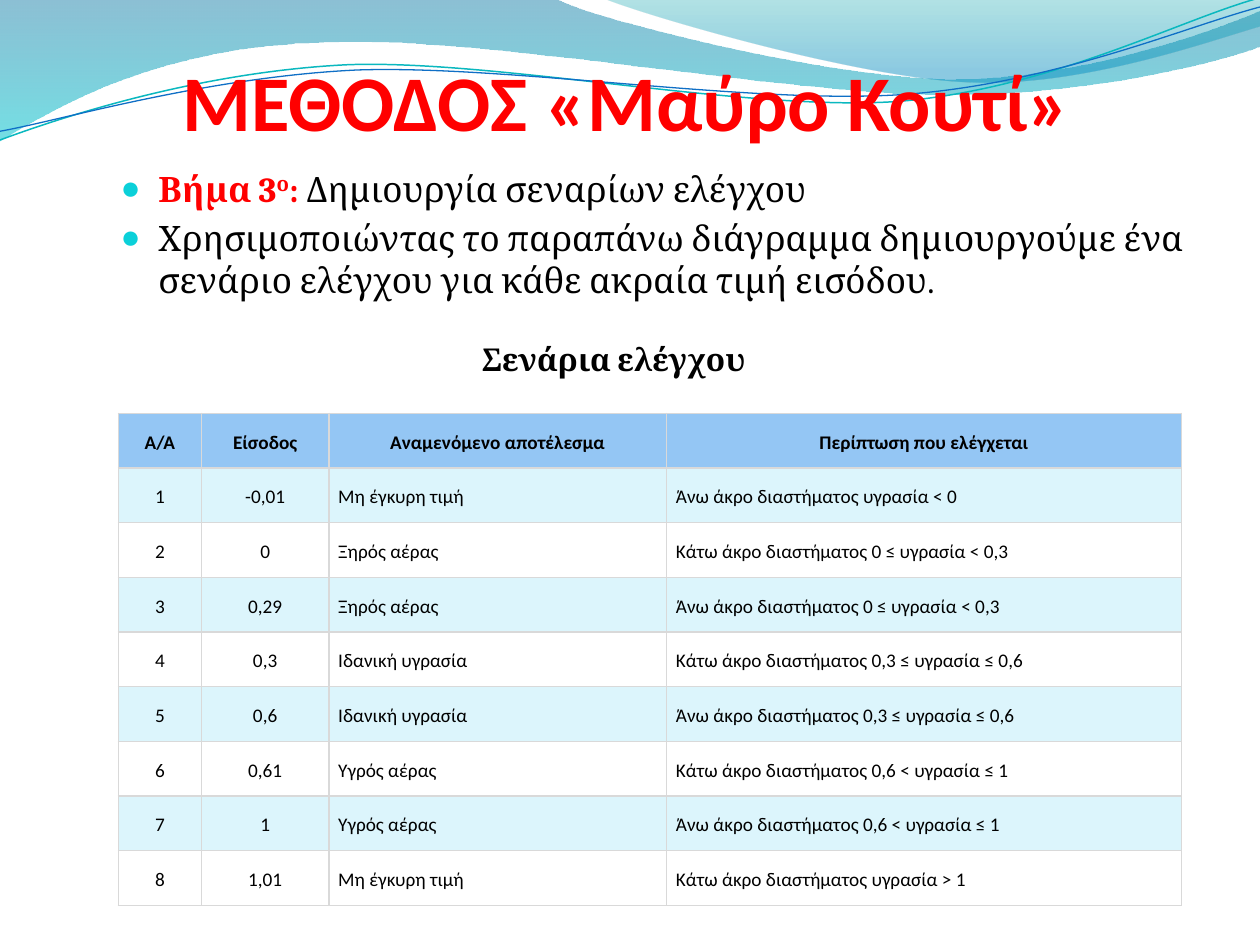
from lxml import etree
from pptx import Presentation
from pptx.dml.color import RGBColor
from pptx.enum import text
from pptx.oxml import ns
from pptx.util import Pt

RED = RGBColor(0xFF, 0x00, 0x00)
BLACK = RGBColor(0x00, 0x00, 0x00)
WHITE = RGBColor(0xFF, 0xFF, 0xFF)
GREY = RGBColor(0xD9, 0xD9, 0xD9)
HEADER_BLUE = RGBColor(0x94, 0xC6, 0xF4)
PALE_BLUE = RGBColor(0xDC, 0xF5, 0xFC)
CYAN = RGBColor(0x0B, 0xD0, 0xD9)
TEAL = RGBColor(0x0A, 0xB8, 0xBF)
BLUE = RGBColor(0x0F, 0x6F, 0xC6)
LEFT_WAVE = [(RGBColor(0x00, 0x74, 0xA1), 0, 45), (RGBColor(0x00, 0xC6, 0xCF), 1, 55)]
RIGHT_WAVE = [(RGBColor(0x00, 0xA1, 0xA9), 0, 30), (RGBColor(0x00, 0x8B, 0xBF), 0.8, 45)]

SCENARIOS = [
    ("Α/Α", "Είσοδος", "Αναμενόμενο αποτέλεσμα", "Περίπτωση που ελέγχεται"),
    ("1", "-0,01", "Μη έγκυρη τιμή", "Άνω άκρο διαστήματος υγρασία < 0"),
    ("2", "0", "Ξηρός αέρας", "Κάτω άκρο διαστήματος 0 ≤ υγρασία < 0,3"),
    ("3", "0,29", "Ξηρός αέρας", "Άνω άκρο διαστήματος 0 ≤ υγρασία < 0,3"),
    ("4", "0,3", "Ιδανική υγρασία", "Κάτω άκρο διαστήματος 0,3 ≤ υγρασία ≤ 0,6"),
    ("5", "0,6", "Ιδανική υγρασία", "Άνω άκρο διαστήματος 0,3 ≤ υγρασία ≤ 0,6"),
    ("6", "0,61", "Υγρός αέρας", "Κάτω άκρο διαστήματος 0,6 < υγρασία ≤ 1"),
    ("7", "1", "Υγρός αέρας", "Άνω άκρο διαστήματος 0,6 < υγρασία ≤ 1"),
    ("8", "1,01", "Μη έγκυρη τιμή", "Κάτω άκρο διαστήματος υγρασία > 1"),
]


def add_xml(parent, tag, **attributes):
    """Append a drawing element to parent and return it."""
    return etree.SubElement(parent, ns.qn(tag), attributes)


def write(paragraph, words, size=20, font="Cambria", color=BLACK, bold=False, raised=False):
    """Add a formatted run to a paragraph."""
    run = paragraph.add_run()
    run.text = words
    run.font.size, run.font.name, run.font.bold = Pt(size), font, bold
    run.font.color.rgb = color
    if raised:
        run.font._element.set("baseline", "30000")


def bend(outline, segments):
    """Join the three straight steps of each six-number segment into one cubic curve."""
    track = next(outline.element.spPr.iter(ns.qn("a:path")))
    steps = iter(track.findall(ns.qn("a:lnTo")))
    for segment in segments:
        group = [next(steps) for _ in range(len(segment) // 2)]
        if len(group) == 3:
            arc = add_xml(track, "a:cubicBezTo")
            group[0].addprevious(arc)
            for step in group:
                arc.append(step[0])
                track.remove(step)


class Deck:
    """Hold the slide and its style, with a method for each kind of element."""

    body_font, table_font = "Cambria", "Calibri"

    def __init__(self):
        """Start a presentation with a title and two body placeholders."""
        self.presentation = Presentation()
        self.presentation.slide_width, self.presentation.slide_height = Pt(720), Pt(540)
        self.slide = self.presentation.slides.add_slide(self.presentation.slide_layouts[3])

    def curve(self, start, segments, closed=False):
        """Draw lines (2 numbers) and cubic curves (6 numbers) without shadow."""
        points = [(Pt(x), Pt(y)) for segment in segments
                  for x, y in zip(segment[::2], segment[1::2])]
        builder = self.slide.shapes.build_freeform(*map(Pt, start), scale=1.0)
        builder.add_line_segments(points, close=closed)
        outline = builder.convert_to_shape()
        outline.shadow.inherit = False
        bend(outline, segments)
        return outline

    def wave(self, start, segments, stops):
        """Draw a translucent wave with a vertical gradient."""
        wave = self.curve(start, segments, closed=True)
        wave.line.fill.background()
        wave.fill.gradient()
        wave.fill.gradient_angle = 270
        for stop, (color, position, _) in zip(wave.fill.gradient_stops, stops):
            stop.color.rgb, stop.position = color, position
        tints = list(wave.element.spPr.iter(ns.qn("a:srgbClr")))
        for tint, (_, _, opacity) in zip(tints, stops):
            add_xml(tint, "a:alpha", val=str(opacity * 1000))

    def strand(self, start, segments, color, width):
        """Draw a thin open curve."""
        strand = self.curve(start, segments)
        strand.fill.background()
        strand.line.color.rgb, strand.line.width = color, Pt(width)

    def placeholder(self, index, box, margins, anchor):
        """Move a placeholder to the front and return its text frame."""
        holder = self.slide.placeholders[index]
        holder.left, holder.top, holder.width, holder.height = map(Pt, box)
        holder.element.getparent().append(holder.element)
        frame = holder.text_frame
        frame.word_wrap, frame.auto_size = True, text.MSO_AUTO_SIZE.NONE
        frame.vertical_anchor = anchor
        (frame.margin_left, frame.margin_top,
         frame.margin_right, frame.margin_bottom) = map(Pt, margins)
        return frame

    def title(self, words):
        """Fill the title."""
        frame = self.placeholder(0, (34, 28, 648, 56), (0, 3.6, 0, 0), text.MSO_ANCHOR.BOTTOM)
        heading = frame.paragraphs[0]
        heading.alignment = text.PP_ALIGN.CENTER
        write(heading, words, size=45, font=self.table_font, color=RED, bold=True)

    def bullets(self, items):
        """Fill the body with bulleted items, each a list of runs."""
        frame = self.placeholder(1, (61.7, 95.5, 636, 96), (7.2, 0, 7.2, 3.6), text.MSO_ANCHOR.TOP)
        for number, runs in enumerate(items):
            item = frame.add_paragraph() if number else frame.paragraphs[0]
            item.space_before = Pt(4)
            layout = item._p.get_or_add_pPr()
            layout.set("marL", str(Pt(21.6)))
            layout.set("indent", str(Pt(-21.6)))
            add_xml(add_xml(layout, "a:buClr"), "a:srgbClr", val=str(CYAN))
            add_xml(layout, "a:buSzPct", val="95000")
            add_xml(layout, "a:buChar", char="●")
            for words, style in runs:
                write(item, words, font=self.body_font, **style)

    def caption(self, words):
        """Fill the second body placeholder with the table's heading."""
        frame = self.placeholder(2, (219.3, 180, 318, 50), (3.6, 0, 3.6, 0), text.MSO_ANCHOR.MIDDLE)
        caption = frame.paragraphs[0]
        caption.level = 2
        caption.space_before = Pt(3.6)
        layout = caption._p.get_or_add_pPr()
        layout.set("marL", str(Pt(72)))
        layout.set("indent", str(Pt(-19.4)))
        add_xml(layout, "a:buNone")
        write(caption, words, size=18, font=self.body_font, bold=True)

    def table(self, rows, widths, left, top, row_height):
        """Add a banded table with a header row."""
        table = self.slide.shapes.add_table(
            len(rows), len(widths), Pt(left), Pt(top),
            Pt(sum(widths)), Pt(row_height * len(rows))).table
        table.first_row = table.horz_banding = False
        for column, width in zip(table.columns, widths):
            column.width = Pt(width)
        for r, row in enumerate(rows):
            table.rows[r].height = Pt(row_height)
            fill = HEADER_BLUE if r == 0 else PALE_BLUE if r % 2 else WHITE
            for c, words in enumerate(row):
                self.cell(table.cell(r, c), words, fill, header=r == 0, centred=r == 0 or c < 2)

    def cell(self, cell, words, fill, header, centred):
        """Format and fill one table cell."""
        cell.margin_left = cell.margin_right = Pt(5.4)
        cell.margin_top = cell.margin_bottom = 0
        cell.vertical_anchor = text.MSO_ANCHOR.MIDDLE
        for side in ("a:lnL", "a:lnR", "a:lnT", "a:lnB"):
            border = add_xml(cell._tc.get_or_add_tcPr(), side, w=str(Pt(1)))
            add_xml(add_xml(border, "a:solidFill"), "a:srgbClr", val=str(GREY))
        cell.fill.solid()
        cell.fill.fore_color.rgb = fill
        entry = cell.text_frame.paragraphs[0]
        entry.alignment = text.PP_ALIGN.CENTER if centred else text.PP_ALIGN.LEFT
        entry.line_spacing, entry.space_before = 1.15, Pt(6)
        write(entry, words, size=11, font=self.table_font, bold=header)


def main():
    """Build the slide and save it."""
    deck = Deck()
    deck.wave((0, 0), [(317, -1), (343, 12, 478, 45, 546, 45), (614, 45, 690, 19, 720, 6),
                       (721, 26), (708, 32, 626, 55, 537, 54), (448, 54, 275, 20, 185, 24),
                       (93, 26, 33, 60, -1, 81)], LEFT_WAVE)
    deck.wave((345, -1), [(366, 8, 491, 45, 554, 47), (618, 50, 692, 23, 720, 15), (720, 0)],
              RIGHT_WAVE)
    deck.strand((0, 80), [(35, 67, 114, 41, 199, 37), (284, 34, 427, 64, 513, 58),
                          (600, 51, 675, 11, 719, -1)], TEAL, 0.85)
    deck.strand((0, 75), [(34, 69, 118, 44, 204, 40), (290, 37, 430, 60, 516, 54),
                          (602, 48, 678, 15, 720, 4)], BLUE, 0.75)
    step = {"color": RED, "bold": True}
    deck.bullets([
        [("Βήμα 3", step), ("ο", {**step, "raised": True}), (": ", step),
         ("Δημιουργία σεναρίων ελέγχου", {})],
        [("Χρησιμοποιώντας το παραπάνω διάγραμμα δημιουργούμε ένα σενάριο ελέγχου "
          "για κάθε ακραία τιμή εισόδου.", {})],
    ])
    deck.table(SCENARIOS, (47.6, 72.7, 193, 294.3), left=67.6, top=236.2, row_height=31.25)
    deck.caption("Σενάρια ελέγχου")
    deck.title("ΜΕΘΟΔΟΣ «Μαύρο Κουτί»")
    deck.presentation.save("out.pptx")


if __name__ == "__main__":
    main()
